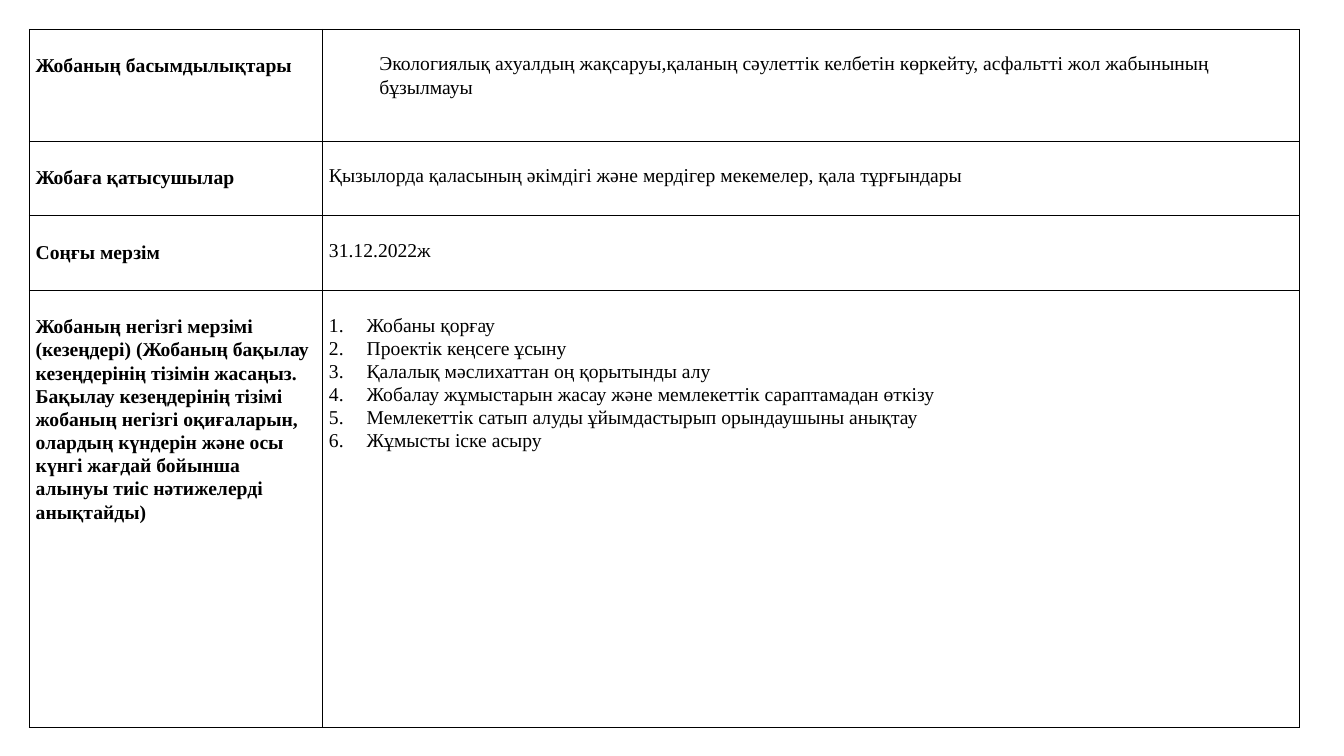
from lxml.etree import SubElement
from pptx import Presentation
from pptx.dml.color import RGBColor
from pptx.enum.text import MSO_ANCHOR
from pptx.oxml.ns import qn
from pptx.util import Cm, Pt

ROWS = [
    ("Жобаның басымдылықтары",
     ["Экологиялық ахуалдың жақсаруы,қаланың сәулеттік келбетін көркейту, "
      "асфальтті жол жабынының бұзылмауы"]),
    ("Жобаға қатысушылар",
     ["Қызылорда қаласының әкімдігі және мердігер мекемелер, қала тұрғындары"]),
    ("Соңғы мерзім", ["31.12.2022ж"]),
    ("Жобаның негізгі мерзімі (кезеңдері) (Жобаның бақылау кезеңдерінің тізімін "
     "жасаңыз. Бақылау кезеңдерінің тізімі жобаның негізгі оқиғаларын, олардың "
     "күндерін және осы күнгі жағдай бойынша алынуы тиіс нәтижелерді анықтайды)",
     ["Жобаны қорғау",
      "Проектік кеңсеге ұсыну",
      "Қалалық мәслихаттан оң қорытынды алу",
      "Жобалау жұмыстарын жасау және мемлекеттік сараптамадан өткізу",
      "Мемлекеттік сатып алуды ұйымдастырып орындаушыны анықтау",
      "Жұмысты іске асыру"]),
]
WIDTHS = [7.39, 24.61]
HEIGHTS = [2.82, 1.88, 1.88, 11.02]
EDGE = 0.74
BLACK = RGBColor(0, 0, 0)
FONT = "Times New Roman"


def frame(cell):
    """Draw a thin black line on all four sides of a cell."""
    props = cell._tc.get_or_add_tcPr()
    for side in ("a:lnL", "a:lnR", "a:lnT", "a:lnB"):
        line = SubElement(props, qn(side), w=str(Pt(1)))
        fill = SubElement(line, qn("a:solidFill"))
        SubElement(fill, qn("a:srgbClr"), val=str(BLACK))


def write(cell, lines, bold=False, left=0, hang=0, top=0.57):
    """Fill a cell with lines; a hanging indent makes them a numbered list."""
    cell.margin_left = cell.margin_right = Cm(0.16)
    cell.margin_top, cell.margin_bottom = Cm(top), 0
    cell.vertical_anchor = MSO_ANCHOR.TOP
    frame(cell)
    cell.fill.background()
    for i, text in enumerate(lines):
        para = cell.text_frame.paragraphs[0] if i == 0 else cell.text_frame.add_paragraph()
        para.line_spacing = 1.07
        props = para._p.get_or_add_pPr()
        props.set("marL", str(Cm(left)))
        props.set("indent", str(Cm(-hang)))
        if hang:
            SubElement(props, qn("a:buFont"), typeface="+mj-lt")
            SubElement(props, qn("a:buAutoNum"), type="arabicPeriod")
        run = para.add_run()
        run.text = text
        font = run.font
        font.name, font.size, font.bold = FONT, Pt(14), bold
        font.color.rgb = BLACK


deck = Presentation()
deck.slide_width, deck.slide_height = Cm(33.87), Cm(19.05)
slide = deck.slides.add_slide(deck.slide_layouts[6])
table = slide.shapes.add_table(len(ROWS), 2, Cm(EDGE), Cm(EDGE),
                               Cm(sum(WIDTHS)), Cm(sum(HEIGHTS))).table
table.first_row = table.horz_banding = False
for col, width in zip(table.columns, WIDTHS):
    col.width = Cm(width)

for i, (head, lines) in enumerate(ROWS):
    table.rows[i].height = Cm(HEIGHTS[i])
    write(table.cell(i, 0), [head], bold=True, top=0.61)
    if len(lines) > 1:
        write(table.cell(i, 1), lines, left=0.95, hang=0.95)
    else:
        write(table.cell(i, 1), lines, left=1.27 if i == 0 else 0)

deck.save("out.pptx")
